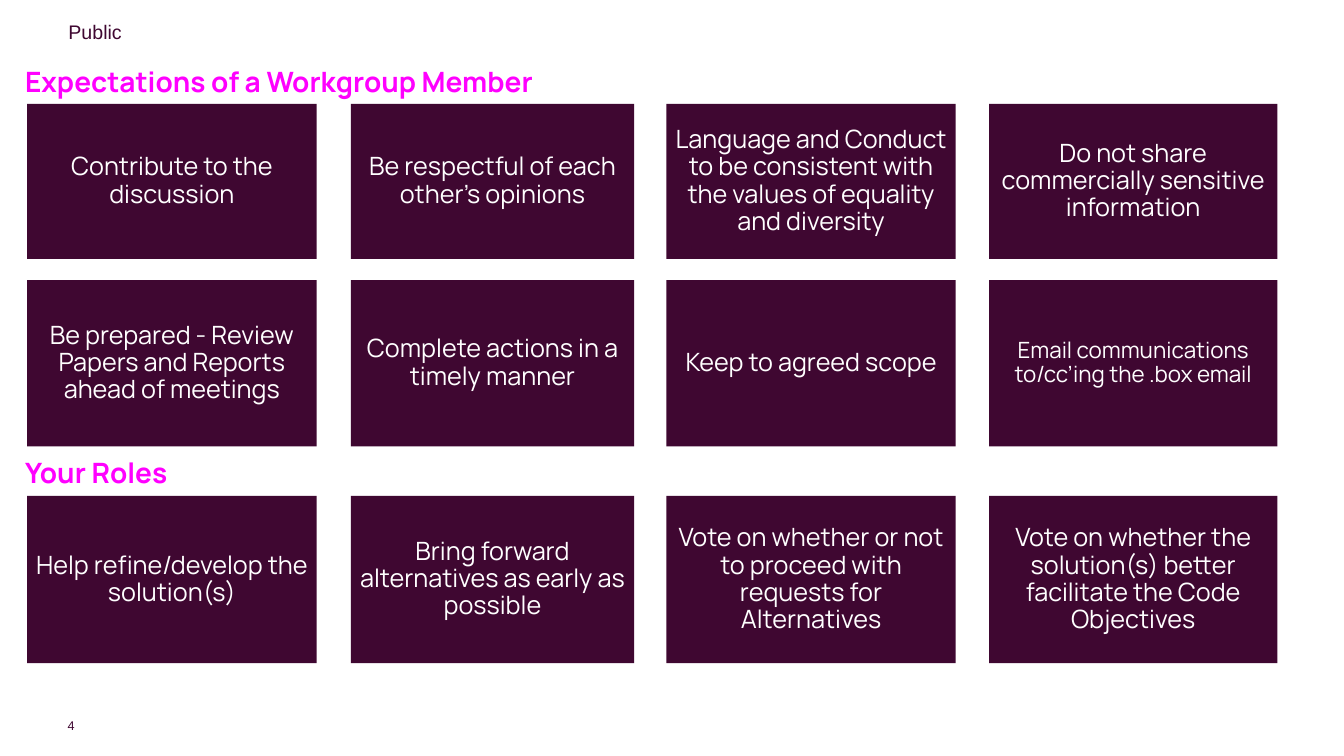
"""Build the slide on workgroup member expectations and roles."""
from pptx import Presentation
from pptx.dml.color import RGBColor
from pptx.enum import shapes, text
from pptx.util import Inches, Pt

COLOURS = {"plum": "3F0731", "magenta": "FF00FF", "white": "FFFFFF"}
ANCHOR, ALIGN = text.MSO_ANCHOR, text.PP_ALIGN

HEADINGS = [
    ("Expectations of a Workgroup Member", (0.15, 0.35, 10.62, 0.95), ANCHOR.MIDDLE),
    ("Your Roles", (0.15, 4.51, 10.62, 0.51), ANCHOR.TOP),
]
CARD_ROWS = [
    (1.03, 1.54, [
        "Contribute to the discussion",
        "Be respectful of each other’s opinions",
        "Language and Conduct to be consistent with the values of equality and diversity",
        "Do not share commercially sensitive information",
    ]),
    (2.78, 1.65, [
        "Be prepared - Review Papers and Reports ahead of meetings",
        "Complete actions in a timely manner",
        "Keep to agreed scope",
        "Email communications to/cc’ing the .box email",
    ]),
    (4.92, 1.66, [
        "Help refine/develop the solution(s)",
        "Bring forward alternatives as early as possible",
        "Vote on whether or not to proceed with requests for Alternatives",
        "Vote on whether the solution(s) better facilitate the Code Objectives",
    ]),
]
CARD_COLUMNS = [(0.27, 2.87), (3.48, 2.81), (6.61, 2.87), (9.81, 2.86)]
SMALLER_CARDS = {"Email communications to/cc’ing the .box email": 16}


def write(shape, wording, size, colour, font="Manrope", bold=False, align=ALIGN.LEFT,
          anchor=ANCHOR.TOP, spacing=0.9, inset=None, wrap=True):
    frame = shape.text_frame
    frame.word_wrap = wrap
    frame.vertical_anchor = anchor
    if inset is not None:
        frame.margin_left = frame.margin_right = Inches(inset)
        frame.margin_top = frame.margin_bottom = Inches(inset)
    frame.text = wording
    paragraph = frame.paragraphs[0]
    paragraph.alignment = align
    paragraph.line_spacing = spacing
    face = paragraph.runs[0].font
    face.name, face.size, face.bold = font, Pt(size), bold
    face.color.rgb = RGBColor.from_string(COLOURS[colour])


def add_label(slide, place, wording, size, colour, **style):
    label = slide.shapes.add_textbox(*map(Inches, place))
    write(label, wording, size, colour, **style)


def add_card(slide, place, wording):
    card = slide.shapes.add_shape(shapes.MSO_SHAPE.RECTANGLE, *map(Inches, place))
    card.shadow.inherit = False
    card.fill.solid()
    card.fill.fore_color.rgb = RGBColor.from_string(COLOURS["plum"])
    card.line.fill.background()
    write(card, wording, SMALLER_CARDS.get(wording, 18), "white",
          align=ALIGN.CENTER, anchor=ANCHOR.MIDDLE, inset=0.08)


def main():
    deck = Presentation()
    deck.slide_width, deck.slide_height = Inches(13.33), Inches(7.5)
    slide = deck.slides.add_slide(deck.slide_layouts[6])

    add_label(slide, (0.59, 7.12, 0.15, 0.15), "4", 9, "plum", font="Arial",
              align=ALIGN.RIGHT, anchor=ANCHOR.MIDDLE, spacing=1.0, inset=0, wrap=False)
    add_label(slide, (0.58, 0.15, 5, 0.34), "Public", 14, "plum", font="Arial", spacing=1.0)
    for wording, place, anchor in HEADINGS:
        add_label(slide, place, wording, 20, "magenta", bold=True, anchor=anchor)
    for top, height, cards in CARD_ROWS:
        for (left, width), wording in zip(CARD_COLUMNS, cards):
            add_card(slide, (left, top, width, height), wording)

    deck.save("out.pptx")


if __name__ == "__main__":
    main()
